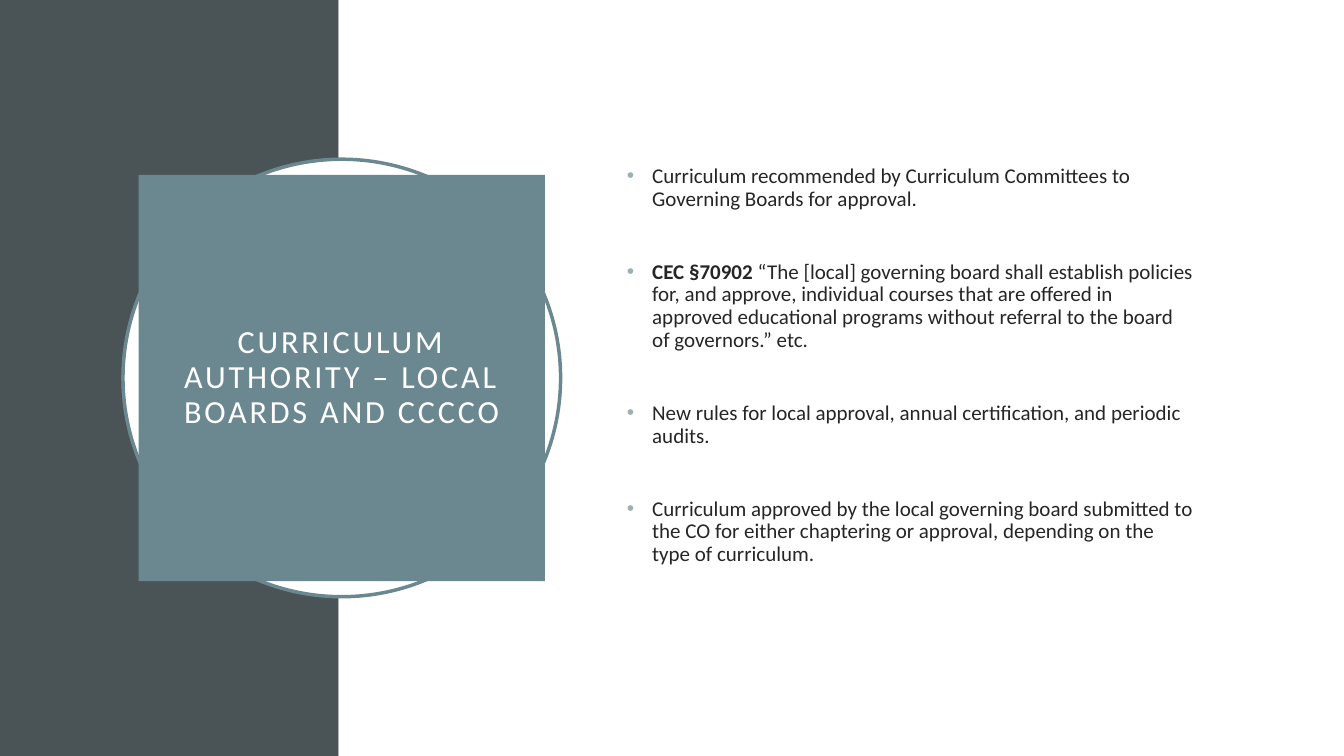
from lxml import etree
from pptx import Presentation
from pptx.dml.color import RGBColor
from pptx.enum.shapes import MSO_SHAPE
from pptx.enum.text import MSO_ANCHOR, PP_ALIGN
from pptx.oxml.ns import qn
from pptx.util import Inches, Pt

RECTANGLE, OVAL = MSO_SHAPE.RECTANGLE, MSO_SHAPE.OVAL
MIDDLE, TOP, CENTER = MSO_ANCHOR.MIDDLE, MSO_ANCHOR.TOP, PP_ALIGN.CENTER
WIDTH, HEIGHT = 13.33, 7.5
BAND_WIDTH = 3.36
TITLE_CENTER_X, TITLE_CENTER_Y = 3.39, HEIGHT / 2
CIRCLE_SIZE, SQUARE_SIZE = 4.34, 4.03
TEAL, WHITE = "6B8891", "FFFFFF"


def add_panel(kind, left, top, width, height, fill, line=None):
    shape = slide.shapes.add_shape(
        kind, Inches(left), Inches(top), Inches(width), Inches(height))
    shape.shadow.inherit = False
    shape.fill.solid()
    shape.fill.fore_color.rgb = RGBColor.from_string(fill)
    if line:
        shape.line.color.rgb = RGBColor.from_string(line)
        shape.line.width = Pt(2.5)
    else:
        shape.line.fill.background()
    return shape


def add_run(paragraph, text, size, color, bold=False):
    run = paragraph.add_run()
    run.text = text
    run.font.name = "Calibri"
    run.font.size = Pt(size)
    run.font.bold = bold
    run.font.color.rgb = RGBColor.from_string(color)
    return run


presentation = Presentation()
presentation.slide_width = Inches(WIDTH)
presentation.slide_height = Inches(HEIGHT)
slide = presentation.slides.add_slide(presentation.slide_layouts[6])

# Background: dark band on the left, white area on the right
add_panel(RECTANGLE, 0, 0, BAND_WIDTH, HEIGHT, "4A5356")
add_panel(RECTANGLE, BAND_WIDTH, 0, WIDTH - BAND_WIDTH, HEIGHT, WHITE)

# Ring and title square share one centre
for kind, size, fill, line in [(OVAL, CIRCLE_SIZE, WHITE, TEAL),
                               (RECTANGLE, SQUARE_SIZE, TEAL, None)]:
    title = add_panel(kind, TITLE_CENTER_X - size / 2, TITLE_CENTER_Y - size / 2,
                      size, size, fill, line)

# Title text
frame = title.text_frame
frame.word_wrap = True
frame.vertical_anchor = MIDDLE
frame.margin_left = frame.margin_right = Inches(0.2)
frame.margin_top = frame.margin_bottom = Inches(0.2)
paragraph = frame.paragraphs[0]
paragraph.alignment = CENTER
paragraph.line_spacing = 0.9
run = add_run(paragraph, "CURRICULUM AUTHORITY – LOCAL BOARDS AND CCCCO", 23, WHITE)
run.font._element.set("spc", "200")

# Bulleted body: each bullet is a list of (text, bold) runs
bullets = [
    [("Curriculum recommended by Curriculum Committees to Governing Boards "
      "for approval.", False)],
    [("CEC §70902 ", True),
     ("“The [local] governing board shall establish policies for, and approve, "
      "individual courses that are offered in approved educational programs "
      "without referral to the board of governors.” etc.", False)],
    [("New rules for local approval, annual certification, and periodic audits.",
      False)],
    [("Curriculum approved by the local governing board submitted to the CO for "
      "either chaptering or approval, depending on the type of curriculum.", False)],
]
body = slide.shapes.add_textbox(Inches(6.12), Inches(1.53), Inches(5.82), Inches(4.43))
frame = body.text_frame
frame.word_wrap = True
frame.vertical_anchor = TOP
frame.margin_top = Inches(0.11)
for index, runs in enumerate(bullets):
    paragraph = frame.add_paragraph() if index else frame.paragraphs[0]
    paragraph.line_spacing = 0.9
    paragraph.space_before = Pt(36 if index else 0)
    properties = paragraph._p.get_or_add_pPr()
    properties.set("marL", str(Inches(0.25)))
    properties.set("indent", str(-Inches(0.25)))
    bullet_color = etree.SubElement(properties, qn("a:buClr"))
    etree.SubElement(bullet_color, qn("a:srgbClr"), val="9BAFB5")
    etree.SubElement(properties, qn("a:buFont"), typeface="Arial")
    etree.SubElement(properties, qn("a:buChar"), char="•")
    for text, bold in runs:
        add_run(paragraph, text, 15, "262626", bold)

presentation.save("out.pptx")
